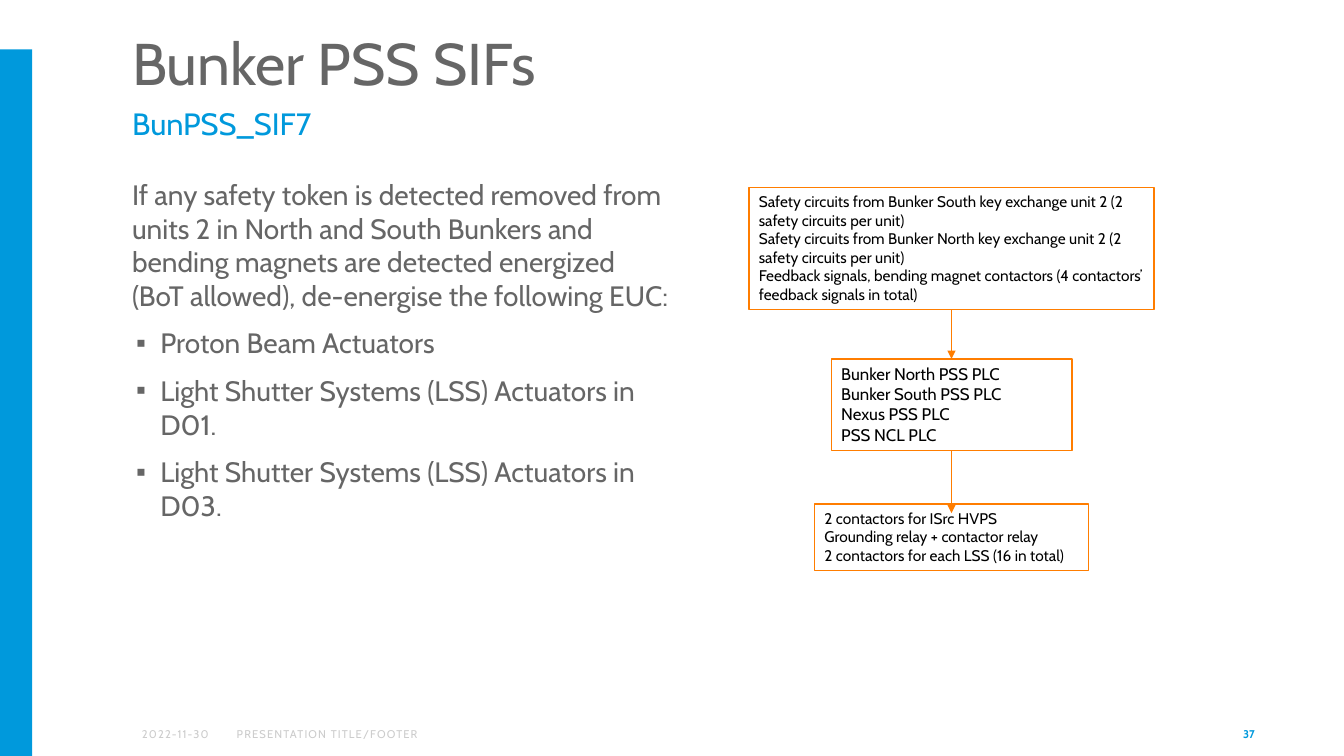
"""Build the Bunker PSS SIFs slide: safety function text beside its signal flow."""
import lxml.etree
import pptx
import pptx.dml.color
import pptx.enum.shapes
import pptx.enum.text
import pptx.oxml.ns
import pptx.util

THEME = {
    "font": "Cabin",
    "blue": "0099DC", "grey": "666666", "pale": "CCCCCC",
    "orange": "FF7D00", "black": "000000", "white": "FFFFFF",
    "title": 42, "subtitle": 22, "body": 20, "plc": 12, "signal": 11, "footer": 8,
}
colour = {key: pptx.dml.color.RGBColor.from_string(THEME[key])
          for key in ("blue", "grey", "pale", "orange", "black", "white")}
qn = pptx.oxml.ns.qn
Anchor = pptx.enum.text.MSO_ANCHOR
AutoSize = pptx.enum.text.MSO_AUTO_SIZE
Align = pptx.enum.text.PP_ALIGN
RECTANGLE = pptx.enum.shapes.MSO_SHAPE.RECTANGLE

deck = pptx.Presentation()
deck.slide_width = pptx.util.Inches(13.33)
deck.slide_height = pptx.util.Inches(7.5)
COLUMN, ROW = deck.slide_width / 100, deck.slide_height / 100
slide = deck.slides.add_slide(deck.slide_layouts[3])


def area(left, top, width, height):
    """Turn percentages of the slide into a position and size."""
    return (round(left * COLUMN), round(top * ROW),
            round(width * COLUMN), round(height * ROW))


def write(part, lines, size, ink, insets=(0.1, 0.05, 0.1, 0.05), anchor=Anchor.TOP):
    """Fill a part with left-aligned lines in one type size and colour."""
    frame = part.text_frame
    frame.text = "\n".join(lines)
    frame.word_wrap = True
    frame.auto_size = AutoSize.NONE
    frame.vertical_anchor = anchor
    (frame.margin_left, frame.margin_top,
     frame.margin_right, frame.margin_bottom) = map(pptx.util.Inches, insets)
    for paragraph in frame.paragraphs:
        paragraph.alignment = Align.LEFT
        paragraph.space_before = pptx.util.Pt(0)
        for run in paragraph.runs:
            run.font.name = THEME["font"]
            run.font.size = pptx.util.Pt(THEME[size])
            run.font.color.rgb = colour[ink]
    return frame


side_bar = slide.shapes.add_shape(RECTANGLE, *area(0, 6.53, 2.4, 93.47))
side_bar.shadow.inherit = False
side_bar.fill.solid()
side_bar.fill.fore_color.rgb = colour["blue"]
side_bar.line.fill.background()

title, requirement, subtitle = slide.placeholders
for part, place in (
    (title, (9.08, 3.87, 76.8, 9.6)),
    (subtitle, (9.08, 13.6, 76.8, 7.33)),
    (requirement, (9, 22.8, 40.95, 69.47)),
):
    part.left, part.top, part.width, part.height = area(*place)

heading = write(title, ["Bunker PSS SIFs"], "title", "grey", (0.1, 0.05, 0.1, 0.02))
heading.paragraphs[0].line_spacing = 0.9
sif_name = write(subtitle, ["BunPSS_SIF7"], "subtitle", "blue", (0.1, 0.02, 0.1, 0.05))
condition = write(requirement, [
    "If any safety token is detected removed from units 2 in North and South Bunkers "
    "and bending magnets are detected energized (BoT allowed), "
    "de-energise the following EUC:",
    "Proton Beam Actuators",
    "Light Shutter Systems (LSS) Actuators in D01.",
    "Light Shutter Systems (LSS) Actuators in D03.",
], "body", "grey", (0, 0.05, 0.02, 0.05))

for paragraph, margin in ((sif_name.paragraphs[0], 0), (condition.paragraphs[0], 0.11)):
    properties = paragraph._p.get_or_add_pPr()
    properties.set("marL", str(pptx.util.Inches(margin)))
    properties.set("indent", "0")
    lxml.etree.SubElement(properties, qn("a:buNone"))

for paragraph in condition.paragraphs[1:]:
    paragraph.level = 1
    paragraph.space_before = pptx.util.Pt(10)
    properties = paragraph._p.get_or_add_pPr()
    properties.set("marL", str(pptx.util.Inches(0.39)))
    properties.set("indent", str(pptx.util.Inches(-0.24)))
    bullet_colour = lxml.etree.SubElement(properties, qn("a:buClr"))
    lxml.etree.SubElement(bullet_colour, qn("a:srgbClr"), val=THEME["grey"])
    lxml.etree.SubElement(properties, qn("a:buChar"), char="▪")

for words, left, width, ink in (
    ("2022-11-30", 9.82, 6.83, "pale"),
    ("PRESENTATION TITLE/FOOTER", 16.88, 35.4, "pale"),
    ("37", 71.62, 22.5, "blue"),
):
    footer = slide.shapes.add_textbox(*area(left, 94.4, width, 5.33))
    line = write(footer, [words], "footer", ink, anchor=Anchor.MIDDLE).paragraphs[0]
    if ink == "pale":
        line.runs[0]._r.get_or_add_rPr().set("spc", "80")
    else:
        line.alignment = Align.RIGHT
        line.runs[0].font.bold = True

FLOW_CENTRE = 70.8
stages = []
for top, width, height, size, lines in (
    (24.8, 30.15, 16.13, "signal", [
        "Safety circuits from Bunker South key exchange unit 2 (2 safety circuits per unit)",
        "Safety circuits from Bunker North key exchange unit 2 (2 safety circuits per unit)",
        "Feedback signals, bending magnet contactors "
        "(4 contactors’ feedback signals in total)"]),
    (47.47, 17.9, 12.13, "plc", [
        "Bunker North PSS PLC", "Bunker South PSS PLC", "Nexus PSS PLC", "PSS NCL PLC"]),
    (66.67, 20.4, 8.8, "signal", [
        "2 contactors for ISrc HVPS", "Grounding relay + contactor relay",
        "2 contactors for each LSS (16 in total)"]),
):
    stage = slide.shapes.add_shape(
        RECTANGLE, *area(FLOW_CENTRE - width / 2, top, width, height))
    stage.shadow.inherit = False
    stage.fill.solid()
    stage.fill.fore_color.rgb = colour["white"]
    stage.line.color.rgb = colour["orange"]
    stage.line.width = pptx.util.Pt(1)
    write(stage, lines, size, "black").auto_size = AutoSize.SHAPE_TO_FIT_TEXT
    stages.append(stage)

inputs, logic, outputs = stages
for source, target, end in ((inputs, logic, 47.47), (logic, None, 67.87)):
    x, y = round(FLOW_CENTRE * COLUMN), round(end * ROW)
    arrow = slide.shapes.add_connector(
        pptx.enum.shapes.MSO_CONNECTOR.STRAIGHT, x, source.top + source.height, x, y)
    arrow.begin_connect(source, 2)
    if target:
        arrow.end_connect(target, 0)
    arrow.line.color.rgb = colour["orange"]
    arrow.line.width = pptx.util.Pt(0.5)
    outline = arrow._element.spPr.find(qn("a:ln"))
    lxml.etree.SubElement(outline, qn("a:tailEnd"), type="triangle")
    lxml.etree.SubElement(arrow._element.spPr, qn("a:effectLst"))

deck.save("out.pptx")
